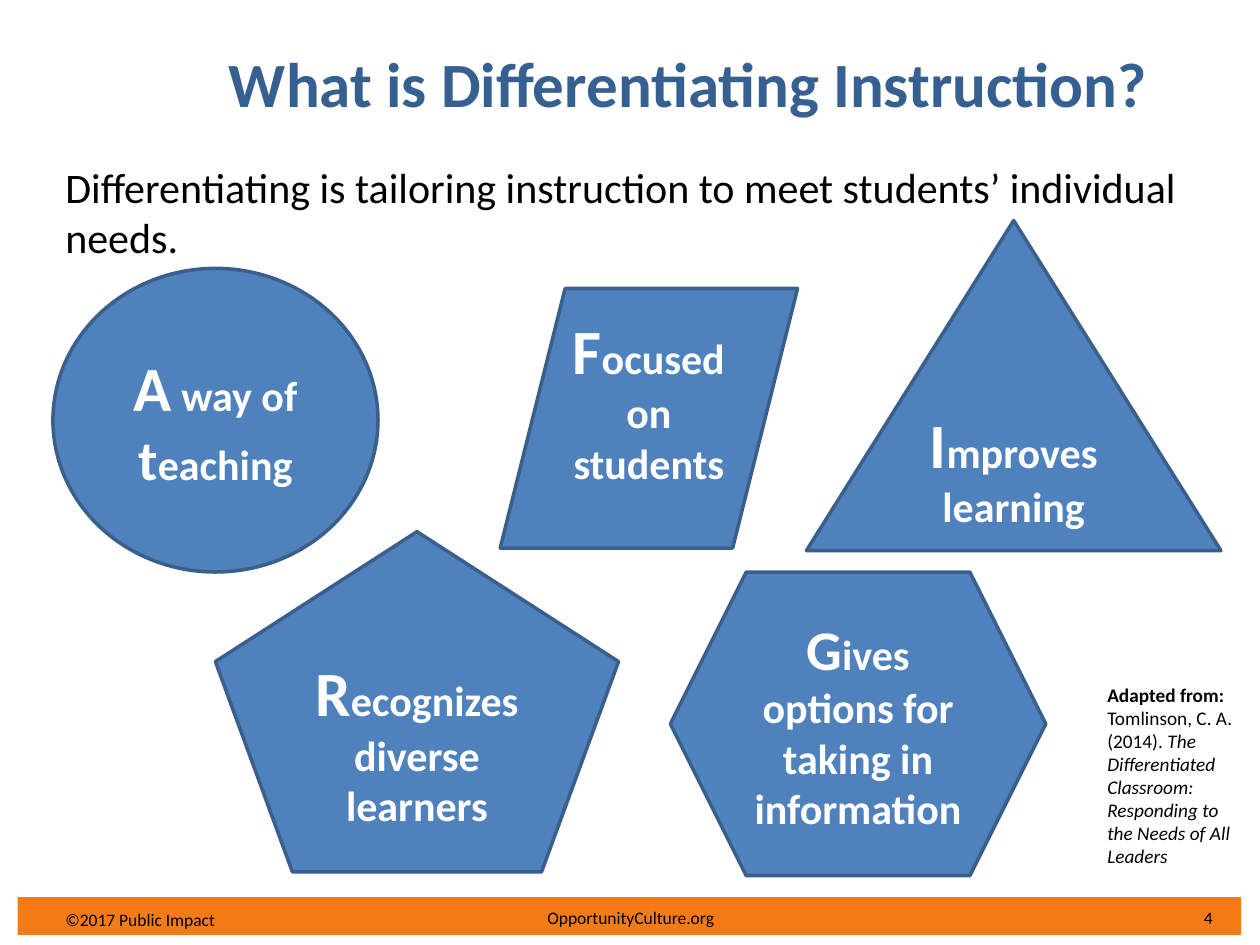
from pptx import Presentation
from pptx.dml.color import RGBColor
from pptx.enum.shapes import MSO_SHAPE as SHAPE
from pptx.enum.text import MSO_ANCHOR as ANCHOR, PP_ALIGN as ALIGN
from pptx.util import Inches, Pt

FONT = "Calibri"
BLACK, WHITE, ORANGE = "000000", "FFFFFF", "F57B17"
TITLE_BLUE, SHAPE_BLUE, OUTLINE_BLUE = "376092", "4F81BD", "3A5F8C"
LEFT = 0.42


def rgb(value):
    return RGBColor.from_string(value)


def write(frame, runs, size=24, color=BLACK, bold=False, align=ALIGN.LEFT,
          anchor=ANCHOR.TOP):
    """Fill a frame with one paragraph; runs are (text, format overrides)."""
    frame.word_wrap = True
    frame.vertical_anchor = anchor
    paragraph = frame.paragraphs[0]
    paragraph.alignment = align
    for text, changes in runs:
        run = paragraph.add_run()
        run.text = text
        font = run.font
        font.name = FONT
        font.size = Pt(changes.get("size", size))
        font.bold = changes.get("bold", bold)
        font.italic = changes.get("italic", False)
        font.color.rgb = rgb(color)


def add_text(slide, box, runs, **style):
    textbox = slide.shapes.add_textbox(*map(Inches, box))
    write(textbox.text_frame, runs, **style)


def add_figure(slide, kind, box, fill, outline=None):
    figure = slide.shapes.add_shape(kind, *map(Inches, box))
    figure.shadow.inherit = False
    figure.fill.solid()
    figure.fill.fore_color.rgb = rgb(fill)
    if outline:
        figure.line.color.rgb = rgb(outline)
        figure.line.width = Pt(2)
    else:
        figure.line.fill.background()
    return figure


def add_idea(slide, kind, box, runs, bottom_inset=0.05):
    idea = add_figure(slide, kind, box, SHAPE_BLUE, OUTLINE_BLUE)
    idea.text_frame.margin_bottom = Inches(bottom_inset)
    write(idea.text_frame, runs, color=WHITE, bold=True, align=ALIGN.CENTER,
          anchor=ANCHOR.MIDDLE)


def add_footer(slide):
    add_figure(slide, SHAPE.RECTANGLE, (0.14, 7.12, 9.71, 0.3), ORANGE)
    for box, text, align in [
        ((3.42, 7.08, 3.17, 0.4), "OpportunityCulture.org", ALIGN.CENTER),
        ((9.33, 7.08, 0.52, 0.4), "4", ALIGN.CENTER),
        ((LEFT, 7.1, 2.42, 0.4), "©2017 Public Impact", ALIGN.LEFT),
    ]:
        add_text(slide, box, [(text, {})], size=10, align=align,
                 anchor=ANCHOR.MIDDLE)


def main():
    prs = Presentation()
    prs.slide_width, prs.slide_height = Inches(10), Inches(7.5)
    slide = prs.slides.add_slide(prs.slide_layouts[6])

    add_footer(slide)

    # Title
    add_text(slide, (0.92, 0.3, 9.08, 0.62),
             [("What is Differentiating Instruction?", {})],
             size=36, color=TITLE_BLUE, bold=True, align=ALIGN.CENTER)

    # Five ideas, each with enlarged key letters
    large, medium = {"size": 36}, {"size": 32}
    add_idea(slide, SHAPE.OVAL, (LEFT, 2.13, 2.58, 2.41),
             [("A", large), (" way of ", {}), ("t", medium), ("eaching", {})])
    add_idea(slide, SHAPE.ISOSCELES_TRIANGLE, (6.4, 1.75, 3.29, 2.62),
             [("I", large), ("mproves learning", {})])
    add_idea(slide, SHAPE.PARALLELOGRAM, (3.97, 2.29, 2.36, 2.06),
             [("F", large), ("ocused on students", {})], bottom_inset=0.35)
    add_idea(slide, SHAPE.REGULAR_PENTAGON, (1.71, 4.22, 3.2, 2.7),
             [("R", large), ("ecognizes diverse learners", {})])
    add_idea(slide, SHAPE.HEXAGON, (5.32, 4.54, 2.98, 2.41),
             [("G", medium), ("ives", {}), (" ", medium),
              ("options for taking in information", {})])

    # Definition
    add_text(slide, (LEFT, 1.23, 9.28, 0.91),
             [("Differentiating is tailoring instruction to meet students’ "
               "individual needs.", {})])

    # Citation
    add_text(slide, (8.69, 5.37, 1.23, 1.58),
             [("Adapted from: ", {"bold": True}),
              ("Tomlinson, C. A. (2014). ", {}),
              ("The Differentiated Classroom: Responding to the Needs of All "
               "Leaders", {"italic": True})], size=11)

    prs.save("out.pptx")


if __name__ == "__main__":
    main()
